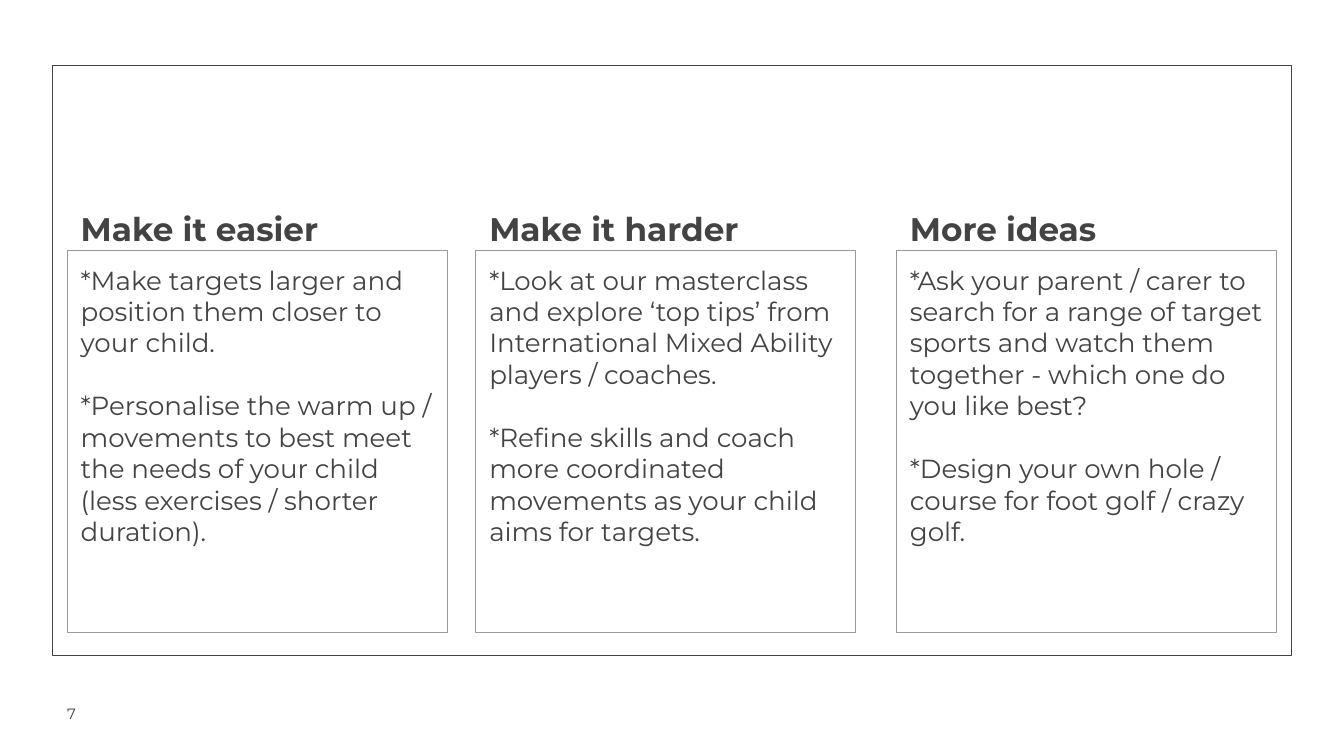
from pptx import Presentation
from pptx.dml.color import RGBColor
from pptx.enum.shapes import MSO_SHAPE
from pptx.enum.text import MSO_ANCHOR, PP_ALIGN
from pptx.util import Pt

RECT = MSO_SHAPE.RECTANGLE
TOP = MSO_ANCHOR.TOP
LEFT = PP_ALIGN.LEFT
DARK = RGBColor(0x43, 0x43, 0x43)
GREY = RGBColor(0x99, 0x99, 0x99)

HEADING = {"name": "Montserrat", "size": Pt(35), "bold": True}
BODY = {"name": "Montserrat", "size": Pt(28), "bold": False}
NUMBER = {"name": "Montserrat", "size": Pt(16), "bold": False}

COLUMN_W, HEADING_H, BODY_H = 406.8, 71.6, 409
COLUMN_TOP = 196.8
COLUMNS = [
    (72, "Make it easier", [
        "*Make targets larger and position them closer to your child.",
        "*Personalise the warm up / movements to best meet the needs of your child "
        "(less exercises / shorter duration).",
    ]),
    (509.8, "Make it harder", [
        "*Look at our masterclass and explore ‘top tips’ from International Mixed "
        "Ability players / coaches.",
        "*Refine skills and coach more coordinated movements as your child aims "
        "for targets.",
    ]),
    (960.5, "More ideas", [
        "*Ask your parent / carer to search for a range of target sports and watch "
        "them together - which one do you like best?",
        "*Design your own hole / course for foot golf / crazy golf.",
    ]),
]


def add_outline(s, x, y, w, h, color):
    sp = s.shapes.add_shape(RECT, Pt(x), Pt(y), Pt(w), Pt(h))
    sp.shadow.inherit = False
    sp.fill.background()
    sp.line.color.rgb = color
    sp.line.width = Pt(0.75)
    return sp


def write(sp, texts, style, inset=14.4, gap=0, spacing=1.0):
    tf = sp.text_frame
    tf.word_wrap = True
    tf.vertical_anchor = TOP
    for side in ("left", "top", "right", "bottom"):
        setattr(tf, f"margin_{side}", Pt(inset))
    for i, text in enumerate(texts):
        p = tf.add_paragraph() if i else tf.paragraphs[0]
        p.alignment = LEFT
        p.line_spacing = spacing
        if i:
            p.space_before = Pt(gap)
        r = p.add_run()
        r.text = text
        for key, value in style.items():
            setattr(r.font, key, value)
        r.font.color.rgb = DARK


def add_column(s, x, y, w, heading, ideas):
    title = s.shapes.add_textbox(Pt(x), Pt(y), Pt(w), Pt(HEADING_H))
    write(title, [heading], HEADING, spacing=1.3)
    body = add_outline(s, x, y + HEADING_H, w, BODY_H, GREY)
    write(body, ideas, BODY, gap=34)


def add_page_number(s, x, y, w, h, number):
    sp = s.shapes.add_textbox(Pt(x), Pt(y), Pt(w), Pt(h))
    write(sp, [number], NUMBER, inset=0)


def main():
    prs = Presentation()
    prs.slide_width, prs.slide_height = Pt(1440), Pt(810)
    s = prs.slides.add_slide(prs.slide_layouts[6])
    add_outline(s, 56.2, 69.8, 1327, 632.2, DARK)
    for x, heading, ideas in COLUMNS:
        add_column(s, x, COLUMN_TOP, COLUMN_W, heading, ideas)
    add_page_number(s, 72, 754.6, 113, 28, "7")
    prs.save("out.pptx")


if __name__ == "__main__":
    main()
